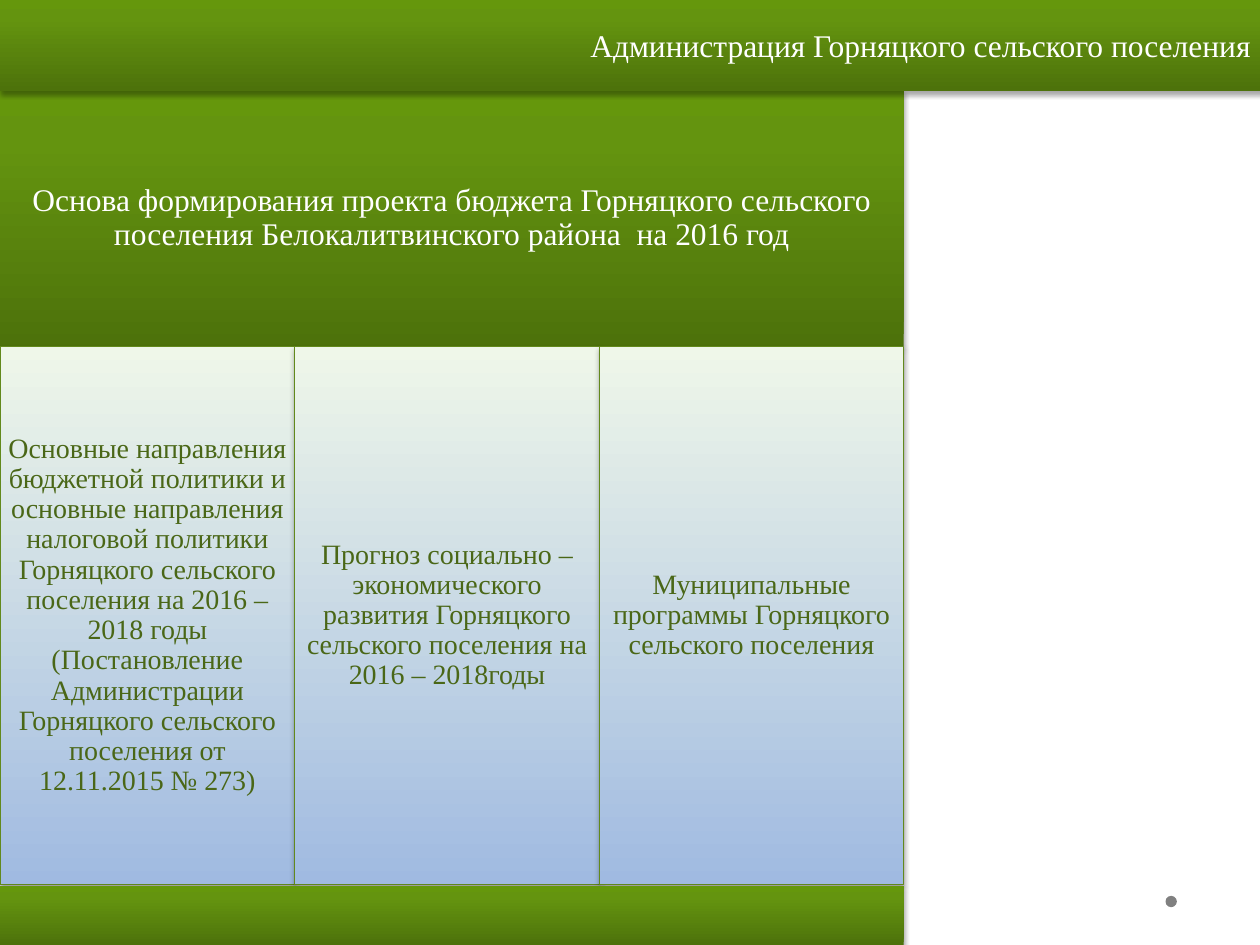
from dataclasses import dataclass

from lxml.etree import SubElement
from pptx import Presentation
from pptx.dml.color import RGBColor
from pptx.enum.shapes import MSO_SHAPE
from pptx.enum.text import MSO_ANCHOR, MSO_AUTO_SIZE, PP_ALIGN
from pptx.oxml.ns import qn
from pptx.util import Pt

WHITE = RGBColor(0xFF, 0xFF, 0xFF)
BLACK = RGBColor(0x00, 0x00, 0x00)
GRAY = RGBColor(0x80, 0x80, 0x80)
EDGE = RGBColor(0x62, 0x89, 0x1C)
INK = RGBColor(0x4A, 0x67, 0x17)
GREEN = (
    (0, RGBColor(0x4D, 0x72, 0x0B)),
    (80, RGBColor(0x64, 0x94, 0x0F)),
    (100, RGBColor(0x65, 0x97, 0x0C)),
)
SKY = ((0, RGBColor(0xA0, 0xBA, 0xE1)), (100, RGBColor(0xEF, 0xF7, 0xE9)))
FONT = "Times New Roman"

HEAD = 51.84
TOP = 198
FOOT = 506.16
FIRST = 168.48
STEP = 174
WIDE = FIRST + 2 * STEP
PAGE_W, PAGE_H = 720, 540


@dataclass
class Look:
    stops: tuple
    ink: RGBColor
    size: float
    inset: float
    edge: RGBColor | None = None
    shade: int = 35
    drop: float = 1.8


@dataclass
class Box:
    left: float
    top: float
    width: float
    height: float
    look: Look
    text: str = ""


BAND = Look(GREEN, WHITE, 18, 5.4)
CARD = Look(SKY, INK, 16, 4.48, EDGE, 38, 1.6)

CARDS = (
    "Основные направления бюджетной политики и основные направления налоговой "
    "политики Горняцкого сельского поселения на 2016 – 2018 годы (Постановление "
    "Администрации Горняцкого сельского поселения от 12.11.2015 № 273)",
    "Прогноз социально – экономического развития Горняцкого сельского поселения "
    "на 2016 – 2018годы",
    "Муниципальные программы Горняцкого сельского поселения",
)


def place(shape, box: Box) -> None:
    shape.left, shape.top = Pt(box.left), Pt(box.top)
    shape.width, shape.height = Pt(box.width), Pt(box.height)


def paint(shape, look: Look) -> None:
    shape.fill.gradient()
    shape.fill.gradient_angle = 90
    ramp = shape._element.spPr.find(".//" + qn("a:gsLst"))
    ramp.clear()
    for spot, color in look.stops:
        stop = SubElement(ramp, qn("a:gs"), pos=str(spot * 1000))
        SubElement(stop, qn("a:srgbClr"), val=str(color))
    if look.edge is None:
        shape.line.fill.background()
    else:
        shape.line.color.rgb = look.edge
        shape.line.width = Pt(0.75)


def shade(shape, look: Look) -> None:
    shape.shadow.inherit = False
    glow = shape._element.spPr.find(qn("a:effectLst"))
    cast = SubElement(
        glow, qn("a:outerShdw"), blurRad=str(Pt(3.1)), dist=str(Pt(look.drop)),
        dir="5400000", rotWithShape="0",
    )
    color = SubElement(cast, qn("a:srgbClr"), val=str(BLACK))
    SubElement(color, qn("a:alpha"), val=str(look.shade * 1000))


def write(shape, text: str, look: Look, align: PP_ALIGN, pitch: float) -> None:
    frame = shape.text_frame
    frame.text = text
    frame.word_wrap = True
    frame.auto_size = MSO_AUTO_SIZE.NONE
    frame.vertical_anchor = MSO_ANCHOR.MIDDLE
    frame.margin_left = frame.margin_right = Pt(look.inset)
    frame.margin_top = frame.margin_bottom = Pt(look.inset)
    para = frame.paragraphs[0]
    para.alignment = align
    para.line_spacing = pitch
    for run in para.runs:
        run.font.name = FONT
        run.font.size = Pt(look.size)
        run.font.color.rgb = look.ink


def draw(slide, box: Box) -> None:
    shape = slide.shapes.add_shape(MSO_SHAPE.RECTANGLE, 0, 0, 0, 0)
    place(shape, box)
    paint(shape, box.look)
    shade(shape, box.look)
    if box.text:
        write(shape, box.text, box.look, PP_ALIGN.CENTER, 0.9)


def add_dot(slide) -> None:
    dot = slide.shapes.add_shape(
        MSO_SHAPE.OVAL, Pt(666), Pt(511.9), Pt(6.5), Pt(6.5)
    )
    dot.shadow.inherit = False
    dot.fill.solid()
    dot.fill.fore_color.rgb = GRAY
    dot.line.fill.background()


def add_title(slide) -> None:
    look = Look(GREEN, WHITE, 18, 7.2)
    title = slide.shapes.title
    place(title, Box(0, 0, 722.16, HEAD, look))
    paint(title, look)
    shade(title, look)
    write(title, "Администрация Горняцкого сельского поселения", look,
          PP_ALIGN.RIGHT, 1.0)
    slide.shapes._spTree.append(title._element)


def main() -> None:
    deck = Presentation()
    deck.slide_width, deck.slide_height = Pt(PAGE_W), Pt(PAGE_H)
    slide = deck.slides.add_slide(deck.slide_layouts[5])
    add_dot(slide)
    draw(slide, Box(
        0, HEAD, WIDE, TOP - HEAD, BAND,
        "Основа формирования проекта бюджета Горняцкого сельского поселения "
        "Белокалитвинского района  на 2016 год",
    ))
    left = 0
    for text in CARDS:
        width = STEP if left else FIRST
        draw(slide, Box(left, TOP, width, 307.44, CARD, text))
        left += width
    draw(slide, Box(0, FOOT, WIDE, PAGE_H - FOOT, BAND))
    add_title(slide)
    deck.save("out.pptx")


if __name__ == "__main__":
    main()
